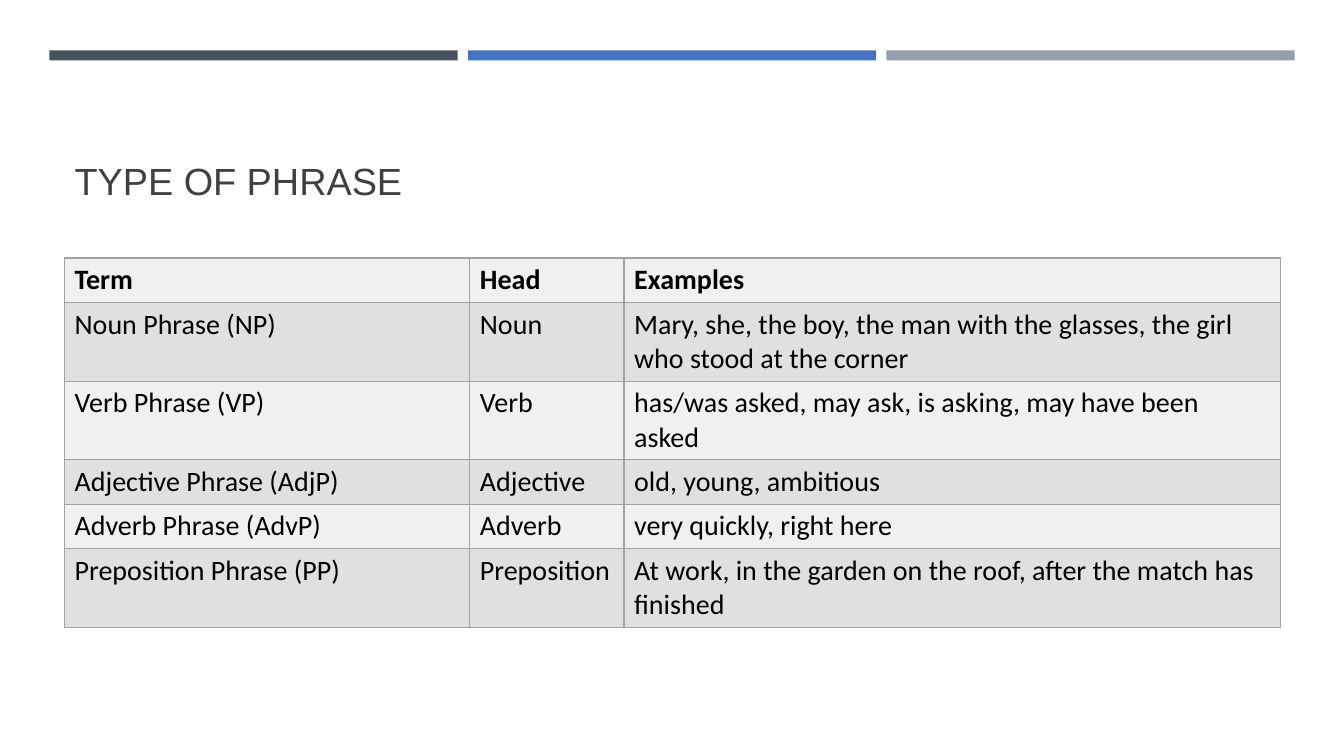
"""Build a slide with a table of phrase types, their heads and examples."""
from lxml import etree
from pptx import Presentation
from pptx.dml.color import RGBColor
from pptx.enum.shapes import MSO_SHAPE
from pptx.enum.text import MSO_ANCHOR, MSO_AUTO_SIZE, PP_ALIGN
from pptx.oxml.ns import qn
from pptx.util import Inches, Pt

RECTANGLE = MSO_SHAPE.RECTANGLE
BOTTOM = MSO_ANCHOR.BOTTOM
NO_AUTOFIT = MSO_AUTO_SIZE.NONE
LEFT = PP_ALIGN.LEFT
TITLE_ONLY = 5

MARGIN, CONTENT_WIDTH = 0.64, 12.06
BAR_LEFT, BAR_TOP, BAR_WIDTH, BAR_HEIGHT, BAR_PITCH = 0.49, 0.5, 4.05, 0.1, 4.15
BAR_COLORS = ["465359", "4472C4", "969FA7"]
COLUMN_WIDTHS = [4.02, 1.53, 6.51]
ONE_LINE, TWO_LINES = 0.44, 0.78
ROW_HEIGHTS = [ONE_LINE, TWO_LINES, TWO_LINES, ONE_LINE, ONE_LINE, TWO_LINES]
BAND_COLORS = ["F0F0F0", "E0E0E0"]
PHRASES = [
    ("Term", "Head", "Examples"),
    ("Noun Phrase (NP)", "Noun",
     "Mary, she, the boy, the man with the glasses, the girl who stood at the corner"),
    ("Verb Phrase (VP)", "Verb", "has/was asked, may ask, is asking, may have been asked"),
    ("Adjective Phrase (AdjP)", "Adjective", "old, young, ambitious"),
    ("Adverb Phrase (AdvP)", "Adverb", "very quickly, right here"),
    ("Preposition Phrase (PP)", "Preposition",
     "At work, in the garden on the roof, after the match has finished"),
]


def color(hex_string):
    return RGBColor.from_string(hex_string)


def add_borders(cell, hex_string, points):
    properties = cell._tc.get_or_add_tcPr()
    for position, side in enumerate(("a:lnL", "a:lnR", "a:lnT", "a:lnB")):
        line = etree.Element(qn(side), w=str(Pt(points)))
        fill = etree.SubElement(line, qn("a:solidFill"))
        etree.SubElement(fill, qn("a:srgbClr"), val=hex_string)
        properties.insert(position, line)


deck = Presentation()
deck.slide_width, deck.slide_height = Inches(13.33), Inches(7.5)
page = deck.slides.add_slide(deck.slide_layouts[TITLE_ONLY])

for index, bar_color in enumerate(BAR_COLORS):
    bar = page.shapes.add_shape(
        RECTANGLE, Inches(BAR_LEFT + index * BAR_PITCH), Inches(BAR_TOP),
        Inches(BAR_WIDTH), Inches(BAR_HEIGHT))
    bar.shadow.inherit = False
    bar.fill.solid()
    bar.fill.fore_color.rgb = color(bar_color)
    bar.line.fill.background()

title = page.shapes.title
title.left, title.top = Inches(MARGIN), Inches(0.77)
title.width, title.height = Inches(CONTENT_WIDTH), Inches(1.3)
title.text_frame.text = "TYPE OF PHRASE"
title.text_frame.auto_size = NO_AUTOFIT
title.text_frame.vertical_anchor = BOTTOM
para = title.text_frame.paragraphs[0]
para.alignment = LEFT
para.line_spacing = 0.9
para.font.name, para.font.size = "Arial", Pt(27)
para.font.color.rgb = color("404040")

table = page.shapes.add_table(
    len(PHRASES), len(COLUMN_WIDTHS), Inches(MARGIN), Inches(2.56),
    Inches(CONTENT_WIDTH), Inches(sum(ROW_HEIGHTS))).table
for column, width in zip(table.columns, COLUMN_WIDTHS):
    column.width = Inches(width)
for row_index, (row, height, phrase) in enumerate(zip(table.rows, ROW_HEIGHTS, PHRASES)):
    row.height = Inches(height)
    for cell, text in zip(row.cells, phrase):
        cell.text = text
        cell.fill.solid()
        cell.fill.fore_color.rgb = color(BAND_COLORS[row_index % 2])
        add_borders(cell, "A3A3A3", 1)
        para = cell.text_frame.paragraphs[0]
        para.font.name, para.font.size = "Calibri", Pt(20)
        para.font.bold = row_index == 0
        para.font.color.rgb = color("000000")

deck.save("out.pptx")
